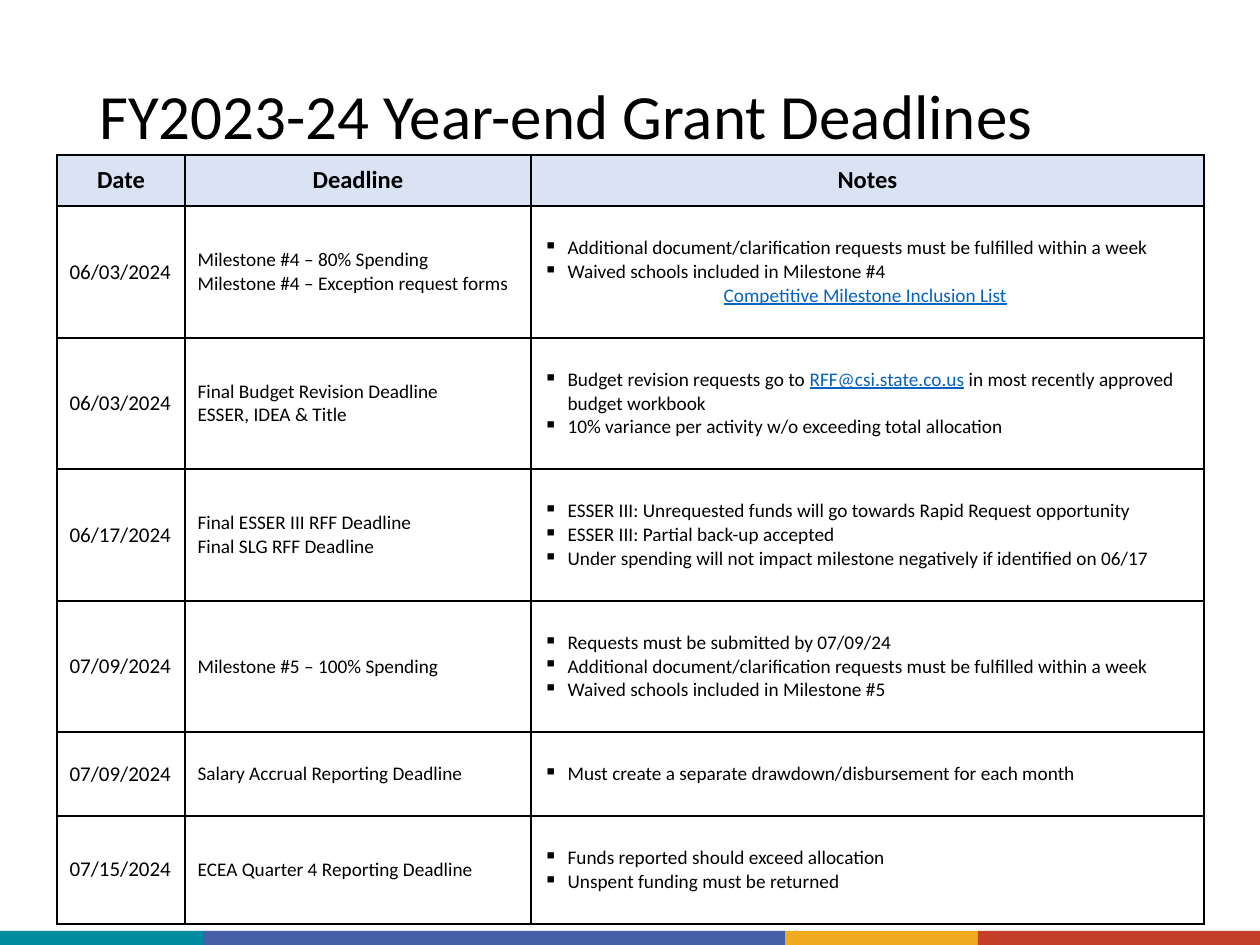
from lxml.etree import SubElement
from pptx import Presentation
from pptx.dml.color import RGBColor
from pptx.enum.shapes import MSO_SHAPE
from pptx.enum.text import MSO_ANCHOR, PP_ALIGN
from pptx.oxml import parse_xml
from pptx.oxml.ns import nsdecls, qn
from pptx.util import Pt

FONT = "Calibri"
BLACK = RGBColor(0x00, 0x00, 0x00)
LINK = RGBColor(0x05, 0x63, 0xC1)
HEAD = RGBColor(0xDA, 0xE3, 0xF3)
TEAL = RGBColor(0x00, 0x8C, 0xA0)
BLUE = RGBColor(0x45, 0x5F, 0xA9)
GOLD = RGBColor(0xEF, 0xAA, 0x1F)
RED = RGBColor(0xC6, 0x3F, 0x28)

BARS = [(203, TEAL), (582, BLUE), (193, GOLD), (282, RED)]
COLS = [128, 346, 673]
HEIGHTS = [51, 132, 131, 132, 131, 84, 108]
TITLES = ["Date", "Deadline", "Notes"]
ROWS = [
    ("06/03/2024",
     ["Milestone #4 – 80% Spending", "Milestone #4 – Exception request forms"],
     ["Additional document/clarification requests must be fulfilled within a week",
      "Waived schools included in Milestone #4"],
     "|Competitive Milestone Inclusion List| "),
    ("06/03/2024",
     ["Final Budget Revision Deadline", "ESSER, IDEA & Title"],
     ["Budget revision requests go to |RFF@csi.state.co.us| in most recently approved budget workbook",
      "10% variance per activity w/o exceeding total allocation"], None),
    ("06/17/2024",
     ["Final ESSER III RFF Deadline", "Final SLG RFF Deadline"],
     ["ESSER III: Unrequested funds will go towards Rapid Request opportunity",
      "ESSER III: Partial back-up accepted",
      "Under spending will not impact milestone negatively if identified on 06/17"], None),
    ("07/09/2024",
     ["Milestone #5 – 100% Spending"],
     ["Requests must be submitted by 07/09/24",
      "Additional document/clarification requests must be fulfilled within a week",
      "Waived schools included in Milestone #5"], None),
    ("07/09/2024",
     ["Salary Accrual Reporting Deadline"],
     ["Must create a separate drawdown/disbursement for each month"], None),
    ("07/15/2024",
     ["ECEA Quarter 4 Reporting Deadline"],
     ["Funds reported should exceed allocation", "Unspent funding must be returned"], None),
]


def px(num):
    """Turn pixels into EMU."""
    return round(num * 914400 / 126)


def write(frame, text, size=11, bold=False, align=PP_ALIGN.LEFT, bullet=False, space=None):
    """Add one paragraph, with link style for the parts between bars."""
    para = frame.paragraphs[0]
    if para.runs:
        para = frame.add_paragraph()
    para.alignment = align
    if space:
        para.line_spacing = space
    if bullet:
        props = para._p.get_or_add_pPr()
        props.set("marL", str(px(24)))
        props.set("indent", str(-px(24)))
        SubElement(props, qn("a:buChar")).set("char", "▪")
    for i, part in enumerate(text.split("|")):
        if part:
            run = para.add_run()
            run.text = part
            font = run.font
            font.name, font.size, font.bold = FONT, Pt(size), bold
            font.color.rgb = LINK if i % 2 else BLACK
            font.underline = bool(i % 2)


def edge(cell):
    """Draw a thin black border on each side of a cell."""
    props = cell._tc.get_or_add_tcPr()
    for i, side in enumerate("LRTB"):
        props.insert(i, parse_xml(
            f'<a:ln{side} {nsdecls("a")} w="12700"><a:solidFill>'
            f'<a:srgbClr val="{BLACK}"/></a:solidFill></a:ln{side}>'))


def stripe(slide, left, top, high):
    """Lay the coloured bars side by side."""
    for wide, color in BARS:
        bar = slide.shapes.add_shape(MSO_SHAPE.RECTANGLE, px(left), px(top), px(wide), px(high))
        bar.shadow.inherit = False
        bar.fill.solid()
        bar.fill.fore_color.rgb = color
        bar.line.fill.background()
        left += wide


def title(slide, left, top, wide, high):
    """Place the slide title."""
    frame = slide.shapes.add_textbox(px(left), px(top), px(wide), px(high)).text_frame
    frame.word_wrap = True
    frame.vertical_anchor = MSO_ANCHOR.MIDDLE
    write(frame, "FY2023-24 Year-end Grant Deadlines", size=36, space=0.9)


def grid(slide, left, top):
    """Build the table of deadlines."""
    table = slide.shapes.add_table(
        len(HEIGHTS), len(COLS), px(left), px(top), px(sum(COLS)), px(sum(HEIGHTS))).table
    for col, wide in zip(table.columns, COLS):
        col.width = px(wide)
    for row, high in zip(table.rows, HEIGHTS):
        row.height = px(high)
    for cell in table.iter_cells():
        cell.vertical_anchor = MSO_ANCHOR.MIDDLE
        cell.fill.background()
        edge(cell)
    for cell, name in zip(table.rows[0].cells, TITLES):
        cell.fill.solid()
        cell.fill.fore_color.rgb = HEAD
        write(cell.text_frame, name, size=14, bold=True, align=PP_ALIGN.CENTER)
    for i, (date, tasks, notes, link) in enumerate(ROWS, 1):
        day, task, note = (cell.text_frame for cell in table.rows[i].cells)
        write(day, date, size=12)
        for line in tasks:
            write(task, line)
        for line in notes:
            write(note, line, bullet=True)
        if link:
            write(note, link, align=PP_ALIGN.CENTER)


def main():
    """Build and save the slide."""
    deck = Presentation()
    deck.slide_width, deck.slide_height = px(1260), px(945)
    slide = deck.slides.add_slide(deck.slide_layouts[6])
    stripe(slide, 0, 931, 14)
    title(slide, 87, 28, 1086, 183)
    grid(slide, 57, 155)
    deck.save("out.pptx")


if __name__ == "__main__":
    main()
